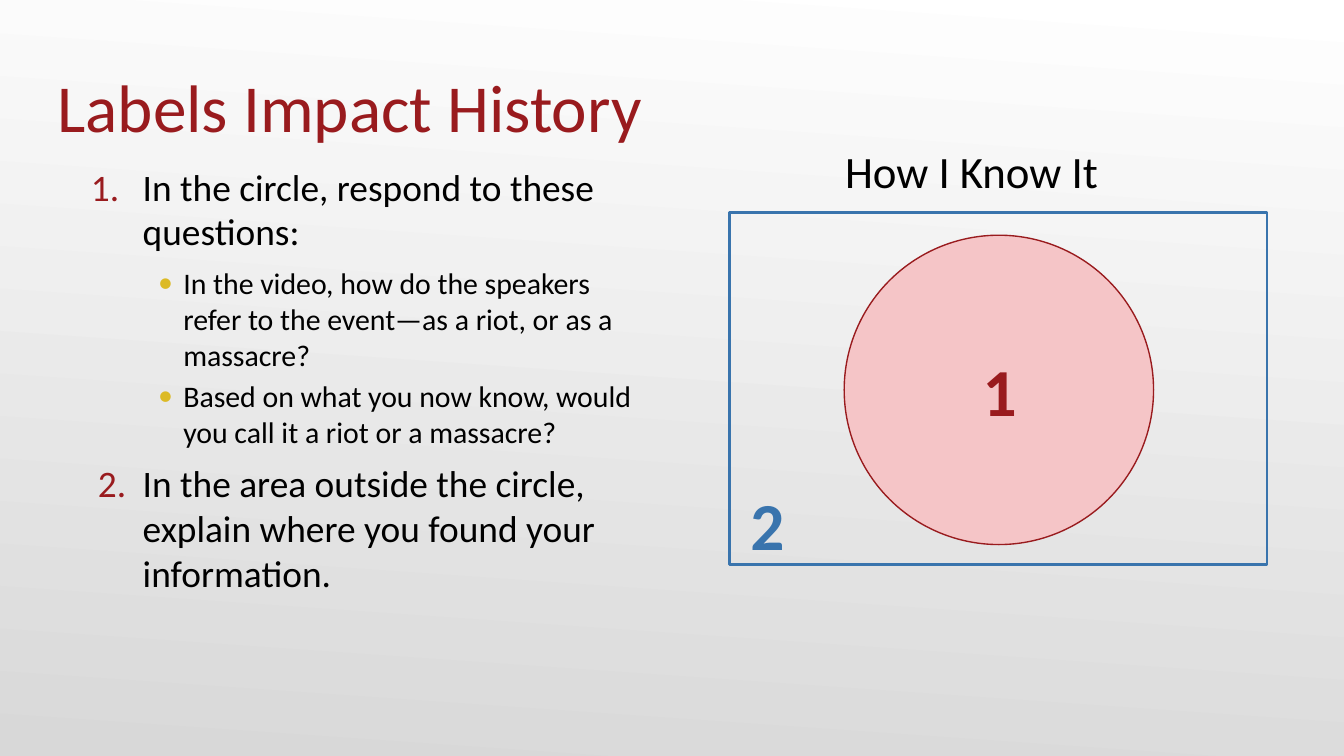
from dataclasses import dataclass, field
from typing import Any, Optional

from lxml.etree import SubElement
from pptx import Presentation
from pptx.dml.color import RGBColor
from pptx.enum.shapes import MSO_SHAPE
from pptx.enum.text import MSO_ANCHOR, PP_ALIGN
from pptx.oxml.ns import qn
from pptx.util import Pt

PX = 9525
FONT = "Calibri"
RED = RGBColor(0x99, 0x1B, 0x1E)
BLUE = RGBColor(0x39, 0x74, 0xAD)
GOLD = RGBColor(0xDC, 0xBA, 0x25)
PINK = RGBColor(0xF5, 0xC5, 0xC7)
BLACK = RGBColor(0, 0, 0)
WHITE = RGBColor(0xFF, 0xFF, 0xFF)
GRAY = RGBColor(0xD8, 0xD8, 0xD8)


@dataclass(frozen=True)
class Box:
    left: int
    top: int
    width: int
    height: int

    def emu(self) -> list[int]:
        return [value * PX for value in (self.left, self.top, self.width, self.height)]


@dataclass(frozen=True)
class Bullet:
    tag: str
    attributes: dict[str, str]
    color: RGBColor
    margin: int
    hanging: int


@dataclass(frozen=True)
class Item:
    text: str
    size: int
    color: RGBColor = BLACK
    bold: bool = False
    format: dict[str, Any] = field(default_factory=dict)
    bullet: Optional[Bullet] = None


@dataclass(frozen=True)
class TextBlock:
    box: Box
    insets: tuple[int, int, int, int]
    items: list[Item]
    anchor: MSO_ANCHOR = MSO_ANCHOR.TOP


@dataclass(frozen=True)
class Figure:
    kind: MSO_SHAPE
    box: Box
    line: RGBColor
    line_width: float
    fill: Optional[RGBColor] = None


def numbered(hanging: int) -> Bullet:
    return Bullet("a:buAutoNum", {"type": "arabicPeriod"}, RED, 49, hanging)


DOT = Bullet("a:buChar", {"char": "•"}, GOLD, 78, 18)
CENTERED = {"alignment": PP_ALIGN.CENTER}

FIGURES = [
    Figure(MSO_SHAPE.RECTANGLE, Box(521, 152, 384, 251), BLUE, 1.5),
    Figure(MSO_SHAPE.FLOWCHART_CONNECTOR, Box(603, 168, 221, 221), RED, 0.75, PINK),
]

TEXTS = [
    TextBlock(Box(41, 22, 864, 82), (0, 5, 0, 0),
              [Item("Labels Impact History", 36, RED)], MSO_ANCHOR.BOTTOM),
    TextBlock(Box(48, 117, 424, 370), (5, 0, 5, 0), [
        Item("In the circle, respond to these questions:", 20,
             format={"space_after": Pt(6)}, bullet=numbered(37)),
        Item("In the video, how do the speakers refer to the event—as a riot, or as a massacre?",
             16, format={"level": 1, "space_after": Pt(3)}, bullet=DOT),
        Item("Based on what you now know, would you call it a riot or a massacre?",
             16, format={"level": 1, "space_after": Pt(6)}, bullet=DOT),
        Item("In the area outside the circle, explain where you found your information.",
             20, bullet=numbered(32)),
    ]),
    TextBlock(Box(482, 98, 424, 48), (10, 5, 10, 5),
              [Item("How I Know It", 24, format=CENTERED)]),
    TextBlock(Box(626, 247, 176, 63), (10, 10, 10, 10),
              [Item("1", 36, RED, True, CENTERED)], MSO_ANCHOR.MIDDLE),
    TextBlock(Box(526, 335, 249, 50), (10, 10, 10, 10), [Item("2", 36, BLUE, True)]),
]


def apply_format(target: Any, values: dict[str, Any]) -> None:
    for name, value in values.items():
        setattr(target, name, value)


def add_bullet(paragraph: Any, bullet: Bullet) -> None:
    properties = paragraph._p.get_or_add_pPr()
    properties.set("marL", str(bullet.margin * PX))
    properties.set("indent", str(-bullet.hanging * PX))
    color = SubElement(properties, qn("a:buClr"))
    SubElement(color, qn("a:srgbClr"), val=str(bullet.color))
    SubElement(properties, qn("a:buFont"), typeface=FONT)
    SubElement(properties, qn(bullet.tag), bullet.attributes)


def add_text(slide: Any, block: TextBlock) -> None:
    frame = slide.shapes.add_textbox(*block.box.emu()).text_frame
    left, top, right, bottom = (inset * PX for inset in block.insets)
    apply_format(frame, {
        "word_wrap": True, "vertical_anchor": block.anchor,
        "margin_left": left, "margin_top": top,
        "margin_right": right, "margin_bottom": bottom,
    })
    for index, item in enumerate(block.items):
        paragraph = frame.add_paragraph() if index else frame.paragraphs[0]
        apply_format(paragraph, item.format)
        if item.bullet:
            add_bullet(paragraph, item.bullet)
        run = paragraph.add_run()
        run.text = item.text
        apply_format(run.font, {"name": FONT, "size": Pt(item.size), "bold": item.bold})
        run.font.color.rgb = item.color


def add_figure(slide: Any, figure: Figure) -> None:
    shape = slide.shapes.add_shape(figure.kind, *figure.box.emu())
    shape.shadow.inherit = False
    if figure.fill is None:
        shape.fill.background()
    else:
        shape.fill.solid()
        shape.fill.fore_color.rgb = figure.fill
    shape.line.color.rgb = figure.line
    shape.line.width = Pt(figure.line_width)


def paint_background(slide: Any) -> None:
    fill = slide.background.fill
    fill.gradient()
    fill.gradient_angle = 266
    for stop, position, color in zip(fill.gradient_stops, (0, 1), (WHITE, GRAY)):
        stop.position = position
        stop.color.rgb = color


def main() -> None:
    presentation = Presentation()
    apply_format(presentation, {"slide_width": 960 * PX, "slide_height": 540 * PX})
    slide = presentation.slides.add_slide(presentation.slide_layouts[6])
    paint_background(slide)
    for figure in FIGURES:
        add_figure(slide, figure)
    for block in TEXTS:
        add_text(slide, block)
    presentation.save("out.pptx")


if __name__ == "__main__":
    main()
